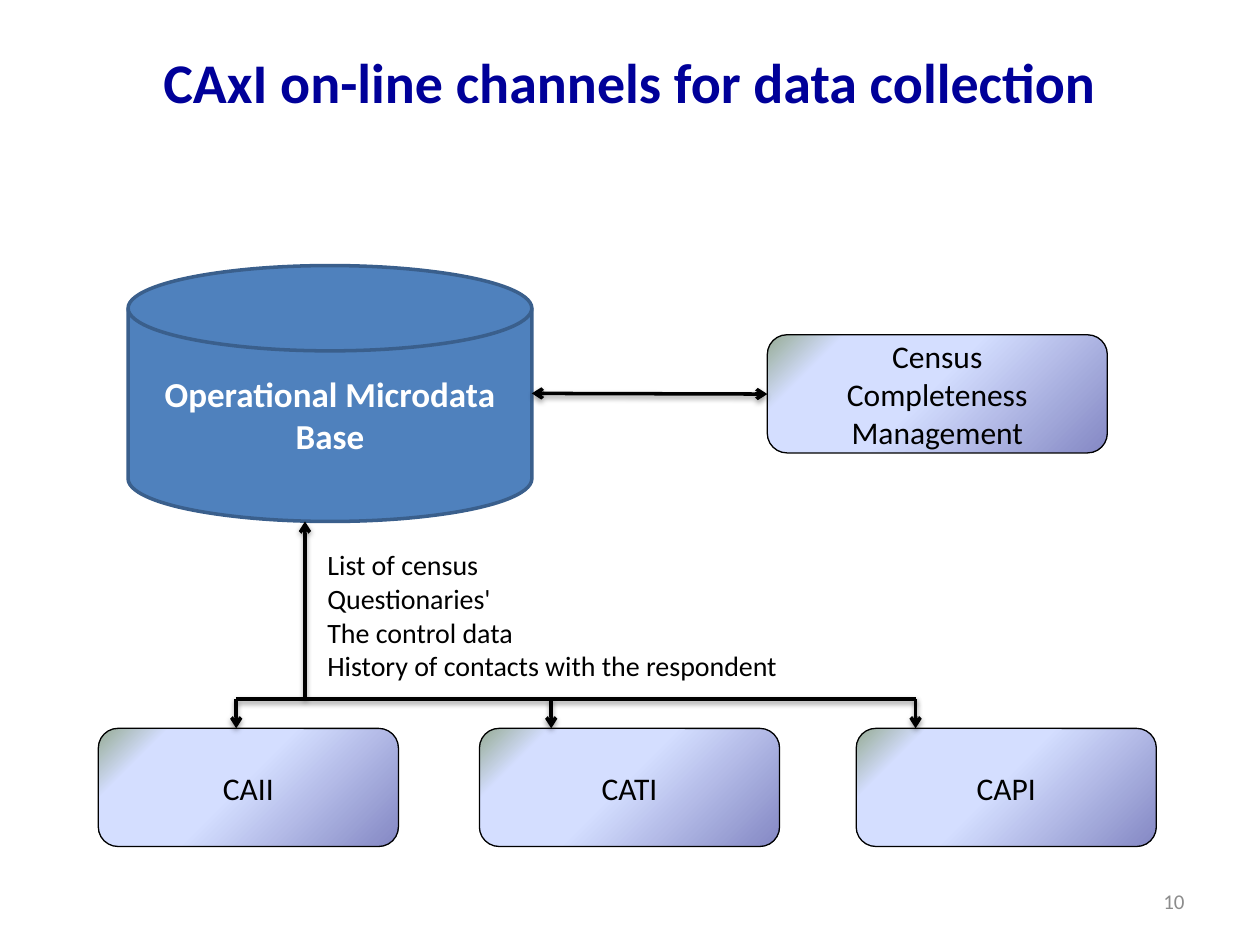
from lxml.etree import SubElement
from pptx import Presentation
from pptx.dml.color import RGBColor
from pptx.enum.shapes import MSO_CONNECTOR, MSO_SHAPE
from pptx.enum.text import MSO_ANCHOR, PP_ALIGN
from pptx.oxml import parse_xml
from pptx.oxml.ns import nsdecls, qn
from pptx.util import Pt

HUES = {
    "title": "000099", "page": "8C8C8C", "disk": "4F81BD", "rim": "3A5F8C",
    "ink": "000000", "paper": "FFFFFF",
    "deep": "8488C4", "pale": "D4DEFF", "moss": "96AB94",
}
STOPS = [(0, "deep"), (53, "pale"), (83, "pale"), (100, "moss")]


class Board:
    """Hold the style and the current slide, and draw each kind of element."""

    def __init__(self, deck, font="Calibri"):
        self.slide = deck.slides.add_slide(deck.slide_layouts[6])
        self.font = font

    def hue(self, name):
        return RGBColor.from_string(HUES[name])

    def letter(self, shape, text, size, hue="ink", bold=False,
               align=PP_ALIGN.CENTER, anchor=MSO_ANCHOR.MIDDLE, before=0):
        frame = shape.text_frame
        frame.text = text
        for key, val in {"word_wrap": True, "vertical_anchor": anchor}.items():
            setattr(frame, key, val)
        look = {"name": self.font, "size": Pt(size), "bold": bold}
        for para in frame.paragraphs:
            para.alignment = align
            para.space_before = Pt(before)
            for run in para.runs:
                for key, val in look.items():
                    setattr(run.font, key, val)
                run.font.color.rgb = self.hue(hue)

    def label(self, box, text, size, **style):
        shape = self.slide.shapes.add_textbox(*map(Pt, box))
        self.letter(shape, text, size, **style)

    def edge(self, line, hue, width):
        line.color.rgb = self.hue(hue)
        line.width = Pt(width)

    def disk(self, box, text):
        shape = self.slide.shapes.add_shape(
            MSO_SHAPE.FLOWCHART_MAGNETIC_DISK, *map(Pt, box))
        shape.shadow.inherit = False
        shape.fill.solid()
        shape.fill.fore_color.rgb = self.hue("disk")
        self.edge(shape.line, "rim", 2)
        self.letter(shape, text, 20, hue="paper", bold=True)

    def card(self, box, text, before=0):
        shape = self.slide.shapes.add_shape(
            MSO_SHAPE.ROUNDED_RECTANGLE, *map(Pt, box))
        shape.shadow.inherit = False
        stops = "".join(
            f'<a:gs pos="{pos * 1000}"><a:srgbClr val="{HUES[name]}"/></a:gs>'
            for pos, name in STOPS)
        grad = parse_xml(
            f'<a:gradFill {nsdecls("a")} rotWithShape="1">'
            f'<a:gsLst>{stops}</a:gsLst><a:path path="circle">'
            '<a:fillToRect l="100000" t="100000"/></a:path></a:gradFill>')
        shape.element.spPr.find(qn("a:prstGeom")).addnext(grad)
        self.edge(shape.line, "ink", 0.75)
        self.letter(shape, text, 18, before=before)

    def link(self, start, end, *tips):
        line = self.slide.shapes.add_connector(
            MSO_CONNECTOR.STRAIGHT, *map(Pt, start + end))
        self.edge(line.line, "ink", 2)
        prop = line.element.spPr
        for tip in tips:
            SubElement(prop.find(qn("a:ln")), qn(f"a:{tip}"), type="arrow")
        prop.append(parse_xml(
            f'<a:effectLst {nsdecls("a")}><a:outerShdw blurRad="{int(Pt(3.1))}" '
            f'dist="{int(Pt(1.6))}" dir="5400000" rotWithShape="0">'
            f'<a:srgbClr val="{HUES["ink"]}"><a:alpha val="38000"/></a:srgbClr>'
            '</a:outerShdw></a:effectLst>'))


def main():
    deck = Presentation()
    deck.slide_width, deck.slide_height = Pt(720), Pt(540)
    board = Board(deck)

    board.label((36, 21.6, 648, 49.7), "CAxI on-line channels for data collection",
                32, hue="title", bold=True)
    board.label((516.2, 500.4, 167.8, 28.8), "10", 12, hue="page",
                align=PP_ALIGN.RIGHT)
    board.disk((73.2, 151.8, 230.7, 146.2), "Operational Microdata Base")
    board.card((438.5, 191.3, 194.3, 67.5), "Census\nCompleteness\nManagement")
    board.link((303.9, 224.8), (438.5, 225.2), "headEnd", "tailEnd")

    rail, top = 399.4, 416.2
    lanes = [("CAII", 56.2, 135), ("CATI", 274, 315), ("CAPI", 489.3, 523.2)]
    for name, left, drop in lanes:
        board.card((left, top, 171.5, 67.5), name, before=3.6)
        board.link((drop, rail), (drop, top), "tailEnd")
    board.link((174.3, rail), (174.3, 298), "tailEnd")
    board.link((lanes[0][2], rail), (lanes[-1][2], rail))

    facts = ["List of census", "Questionaries'", "The control data",
             "History of contacts with the respondent"]
    board.label((180, 309.6, 315.4, 85), "\v".join(facts), 16,
                align=PP_ALIGN.LEFT, anchor=MSO_ANCHOR.TOP)

    deck.save("out.pptx")


if __name__ == "__main__":
    main()
